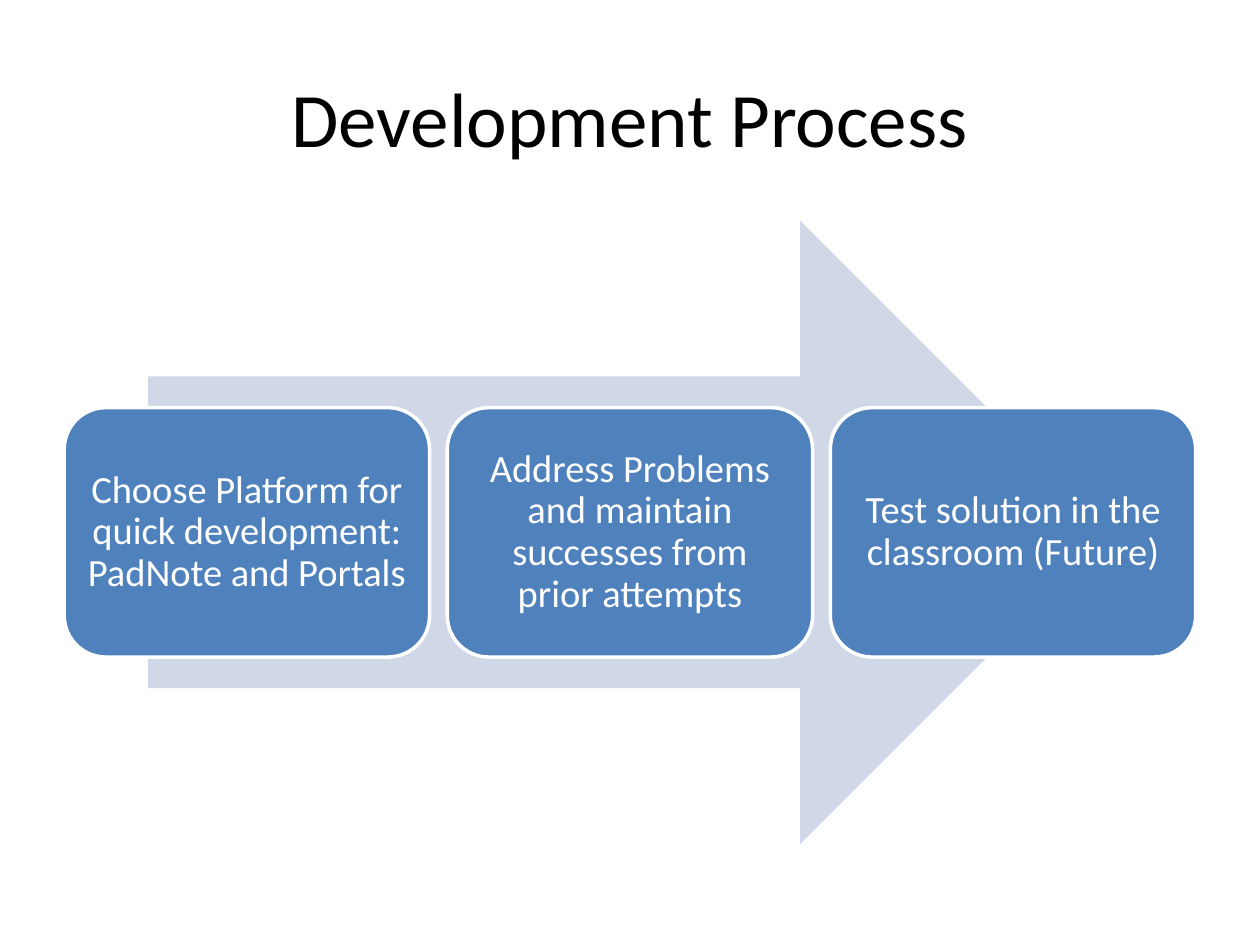
from pptx import Presentation
from pptx.dml.color import RGBColor
from pptx.enum.shapes import MSO_SHAPE
from pptx.enum.text import MSO_ANCHOR, PP_ALIGN
from pptx.util import Inches, Pt

STEPS = [
    "Choose Platform for quick development: PadNote and Portals",
    "Address Problems and maintain successes from prior attempts",
    "Test solution in the classroom (Future)",
]


def rgb(value):
    return RGBColor.from_string(value)


def set_text(sp, text, size, color):
    tf = sp.text_frame
    tf.word_wrap = True
    tf.vertical_anchor = MSO_ANCHOR.MIDDLE
    p = tf.paragraphs[0]
    p.text = text
    p.alignment = PP_ALIGN.CENTER
    p.font.name = "Calibri"
    p.font.size = Pt(size)
    p.font.color.rgb = rgb(color)
    return tf


def add_block(s, kind, left, top, width, height, fill):
    sp = s.shapes.add_shape(kind, Inches(left), Inches(top), Inches(width), Inches(height))
    sp.shadow.inherit = False
    sp.fill.solid()
    sp.fill.fore_color.rgb = rgb(fill)
    sp.line.fill.background()
    return sp


def add_title(s, text, left, top, width, height):
    title = s.shapes.title
    title.left, title.top = Inches(left), Inches(top)
    title.width, title.height = Inches(width), Inches(height)
    set_text(title, text, 44, "000000")


def add_step(s, text, left, top, width, height):
    sp = add_block(s, MSO_SHAPE.ROUNDED_RECTANGLE, left, top, width, height, "4F81BD")
    sp.line.color.rgb = rgb("FFFFFF")
    sp.line.width = Pt(2)
    tf = set_text(sp, text, 22, "FFFFFF")
    tf.margin_left = tf.margin_right = Inches(0.09)
    tf.margin_top = tf.margin_bottom = Inches(0.09)
    tf.paragraphs[0].line_spacing = 0.9


def add_process(s, steps, left, top, width, height):
    arrow_width = width * 0.85
    add_block(s, MSO_SHAPE.RIGHT_ARROW, left + (width - arrow_width) / 2, top,
              arrow_width, height, "D0D8E8")
    gap = 0.14
    step_width = (width - 0.02 - gap * (len(steps) - 1)) / len(steps)
    step_height = height * 0.4
    step_top = top + (height - step_height) / 2
    for i, text in enumerate(steps):
        add_step(s, text, left + 0.01 + i * (step_width + gap), step_top,
                 step_width, step_height)


def main():
    prs = Presentation()
    prs.slide_width, prs.slide_height = Inches(10), Inches(7.5)
    s = prs.slides.add_slide(prs.slide_layouts[5])
    add_title(s, "Development Process", 0.5, 0.3, 9, 1.25)
    add_process(s, STEPS, 0.5, 1.75, 9, 4.95)
    prs.save("out.pptx")


if __name__ == "__main__":
    main()
